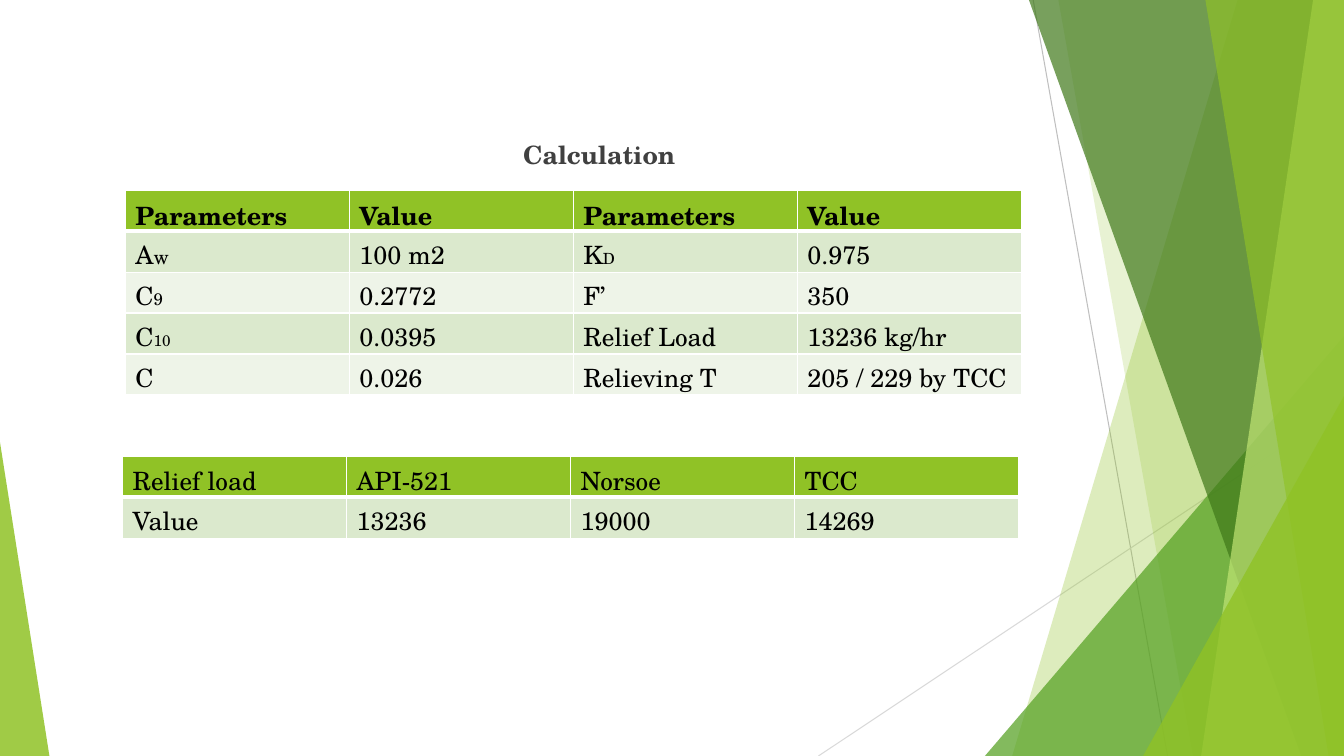
import lxml.etree
import pptx
import pptx.dml.color
import pptx.enum.shapes
import pptx.enum.text
import pptx.oxml
import pptx.oxml.ns
import pptx.util

Pt = pptx.util.Pt
RGBColor = pptx.dml.color.RGBColor
qn = pptx.oxml.ns.qn

WHITE = RGBColor(0xFF, 0xFF, 0xFF)
BLACK = RGBColor(0x00, 0x00, 0x00)
DARK_GREY = RGBColor(0x40, 0x40, 0x40)
GREY = RGBColor(0xBF, 0xBF, 0xBF)
LIGHT_GREY = RGBColor(0xD9, 0xD9, 0xD9)
LIME = RGBColor(0x90, 0xC2, 0x26)
LEAF = RGBColor(0x54, 0xA0, 0x21)
FOREST = RGBColor(0x3F, 0x78, 0x19)
PALE_LIME = RGBColor(0xC0, 0xE4, 0x74)
BAND_DARK = RGBColor(0xDB, 0xE9, 0xCD)
BAND_LIGHT = RGBColor(0xEE, 0xF4, 0xE8)

FONT = "TeX Gyre Schola"
TEXT_SIZE = 18
PAGE_BOX = (0, 0, 960, 540)

PARAMETERS = [
    ["Parameters", "Value", "Parameters", "Value"],
    [("A", "w", 14), "100 m2", ("K", "D", 11), "0.975"],
    [("C", "9", 12), "0.2772", "F’", "350"],
    [("C", "10", 11), "0.0395", "Relief Load", "13236 kg/hr"],
    ["C", "0.026", "Relieving T", "205 / 229 by TCC"],
]
RELIEF_LOADS = [
    ["Relief load", "API-521", "Norsoe", "TCC"],
    ["Value", "13236", "19000", "14269"],
]


def paint(shape, color, opacity):
    """Fill a shape with a colour at the given opacity in percent."""
    shape.shadow.inherit = False
    shape.line.fill.background()
    shape.fill.solid()
    shape.fill.fore_color.rgb = color
    tone = shape.fill._xPr.find(".//" + qn("a:srgbClr"))
    lxml.etree.SubElement(tone, qn("a:alpha"), val=str(opacity * 1000))


def add_line(page, start, end, color):
    """Draw a thin straight line."""
    line = page.shapes.add_connector(
        pptx.enum.shapes.MSO_CONNECTOR.STRAIGHT, *map(Pt, start + end))
    line.line.color.rgb = color
    line.line.width = Pt(0.75)
    lxml.etree.SubElement(line._element.spPr, qn("a:effectLst"))


def add_blade(page, box, top_offset, bottom_offset, color, opacity):
    """Draw a full-height blade that reaches the right edge of the box."""
    left, top, width, height = box
    right, bottom = left + width, top + height
    outline = page.shapes.build_freeform(
        Pt(left + top_offset), Pt(top), scale=1.0)
    corners = [(right, top), (right, bottom), (left + bottom_offset, bottom)]
    outline.add_line_segments([(Pt(x), Pt(y)) for x, y in corners], close=True)
    paint(outline.convert_to_shape(), color, opacity)


def add_triangle(page, box, apex, color, opacity):
    """Draw a triangle with its apex at a fraction of the width."""
    triangle = page.shapes.add_shape(
        pptx.enum.shapes.MSO_SHAPE.ISOSCELES_TRIANGLE, *map(Pt, box))
    triangle.adjustments[0] = apex
    paint(triangle, color, opacity)


def add_backdrop(page, box):
    """Draw the lines and translucent green facets around the page edges."""
    left, top, width, height = box
    right, bottom = left + width, top + height
    add_line(page, (left + 738, top), (left + 834, bottom), GREY)
    add_line(page, (right, top + 290), (left + 584.6, bottom), LIGHT_GREY)
    add_blade(page, box, 884, 723, LIME, 30)
    add_blade(page, box, 756, 852, LIME, 20)
    add_triangle(page, (right - 256.5, bottom - 300, 256.5, 300), 1, LEAF, 72)
    add_blade(page, box, 735, 929.5, FOREST, 70)
    add_blade(page, box, 938, 858, PALE_LIME, 70)
    add_blade(page, box, 861, 949, LIME, 65)
    add_triangle(page, (right - 143.5, bottom - 257, 143.5, 257), 1, LIME, 80)
    add_triangle(page, (left, bottom - 224, 35.3, 224), 0, LIME, 85)


def add_heading(page, box, text):
    """Place the bold heading centred in its box."""
    frame = page.shapes.add_textbox(*map(Pt, box)).text_frame
    frame.word_wrap = True
    frame.vertical_anchor = pptx.enum.text.MSO_ANCHOR.MIDDLE
    para = frame.paragraphs[0]
    para.text = text
    para.alignment = pptx.enum.text.PP_ALIGN.CENTER
    para.font.name, para.font.size, para.font.bold = FONT, Pt(TEXT_SIZE), True
    para.font.color.rgb = DARK_GREY


def set_borders(cell, top_width, bottom_width):
    """Give a cell white borders, one point wide at the sides."""
    widths = {"L": 1, "R": 1, "T": top_width, "B": bottom_width}
    properties = cell._tc.get_or_add_tcPr()
    for position, (side, width) in enumerate(widths.items()):
        border = lxml.etree.Element(qn("a:ln" + side), w=str(Pt(width)))
        fill = lxml.etree.SubElement(border, qn("a:solidFill"))
        lxml.etree.SubElement(fill, qn("a:srgbClr"), val=str(WHITE))
        properties.insert(position, border)


def fill_cell(cell, content, bold):
    """Write a cell's text, with a smaller index where one is given."""
    para = cell.text_frame.paragraphs[0]
    para.font.name, para.font.size, para.font.bold = FONT, Pt(TEXT_SIZE), bold
    para.font.color.rgb = BLACK
    if isinstance(content, str):
        para.add_run().text = content
        return
    symbol, index, index_size = content
    para.add_run().text = symbol
    span = para.add_run()
    span.text = index
    span.font.size = Pt(index_size)


def add_banded_table(page, box, rows, bold_header):
    """Place a table with a lime header and alternating row bands."""
    table = page.shapes.add_table(
        len(rows), len(rows[0]), *map(Pt, box)).table
    for row_number, row in enumerate(rows):
        header = row_number == 0
        band = LIME if header else (BAND_LIGHT, BAND_DARK)[row_number % 2]
        for column_number, content in enumerate(row):
            cell = table.cell(row_number, column_number)
            cell.fill.solid()
            cell.fill.fore_color.rgb = band
            set_borders(cell, 3 if row_number == 1 else 1, 3 if header else 1)
            fill_cell(cell, content, header and bold_header)


def add_calculation_slide(deck, box):
    """Build the calculation slide inside the given box."""
    page = deck.slides.add_slide(deck.slide_layouts[6])
    left, top = box[:2]
    add_backdrop(page, box)
    add_heading(page, (left + 348, top + 95, 160, 30), "Calculation")
    add_banded_table(
        page, (left + 89.5, top + 136, 640, 146), PARAMETERS, True)
    add_banded_table(
        page, (left + 87.5, top + 326, 640, 58.4), RELIEF_LOADS, False)


def main():
    """Create the deck and save it."""
    deck = pptx.Presentation()
    deck.slide_width, deck.slide_height = map(Pt, PAGE_BOX[2:])
    add_calculation_slide(deck, PAGE_BOX)
    deck.save("out.pptx")


if __name__ == "__main__":
    main()
